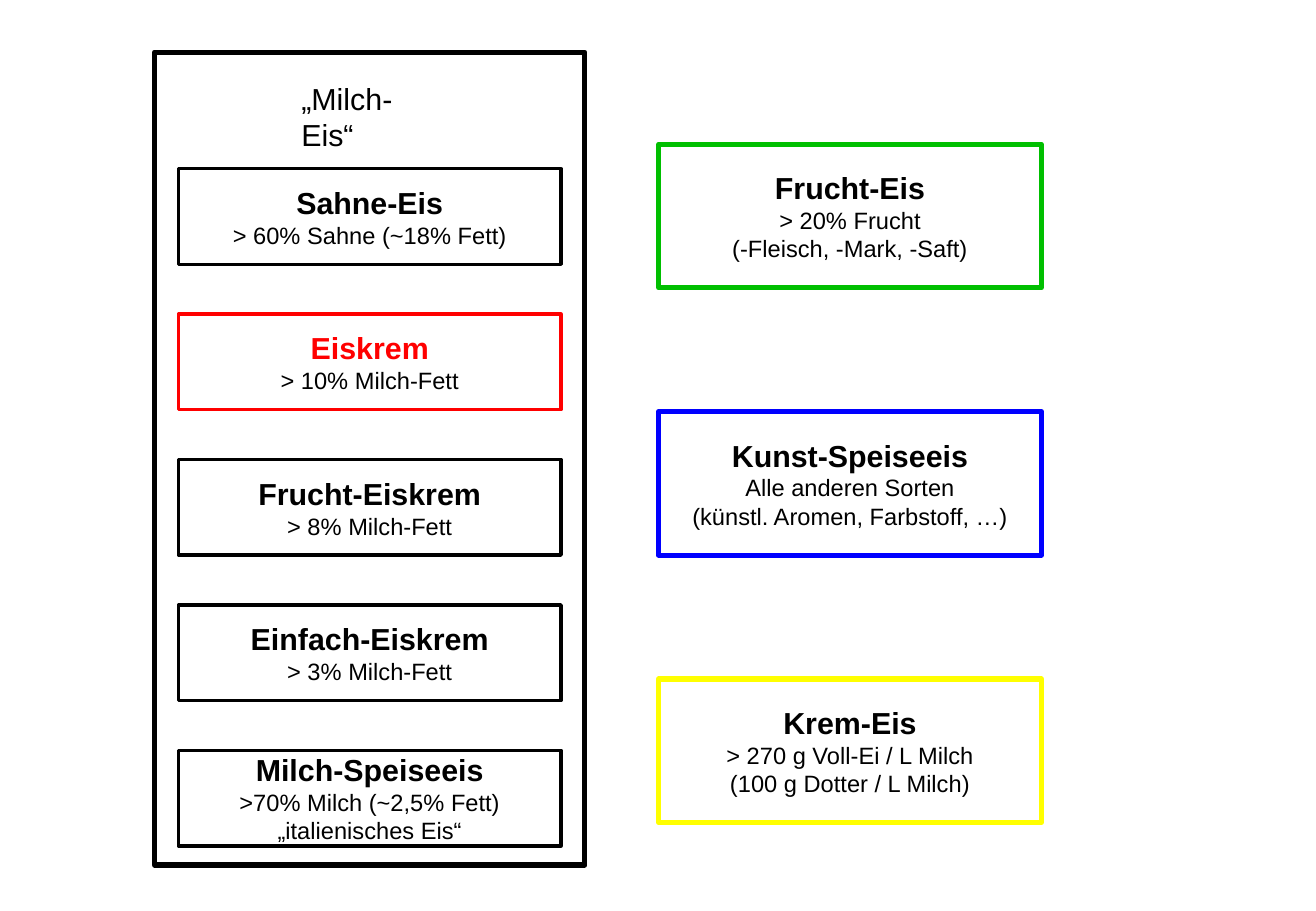
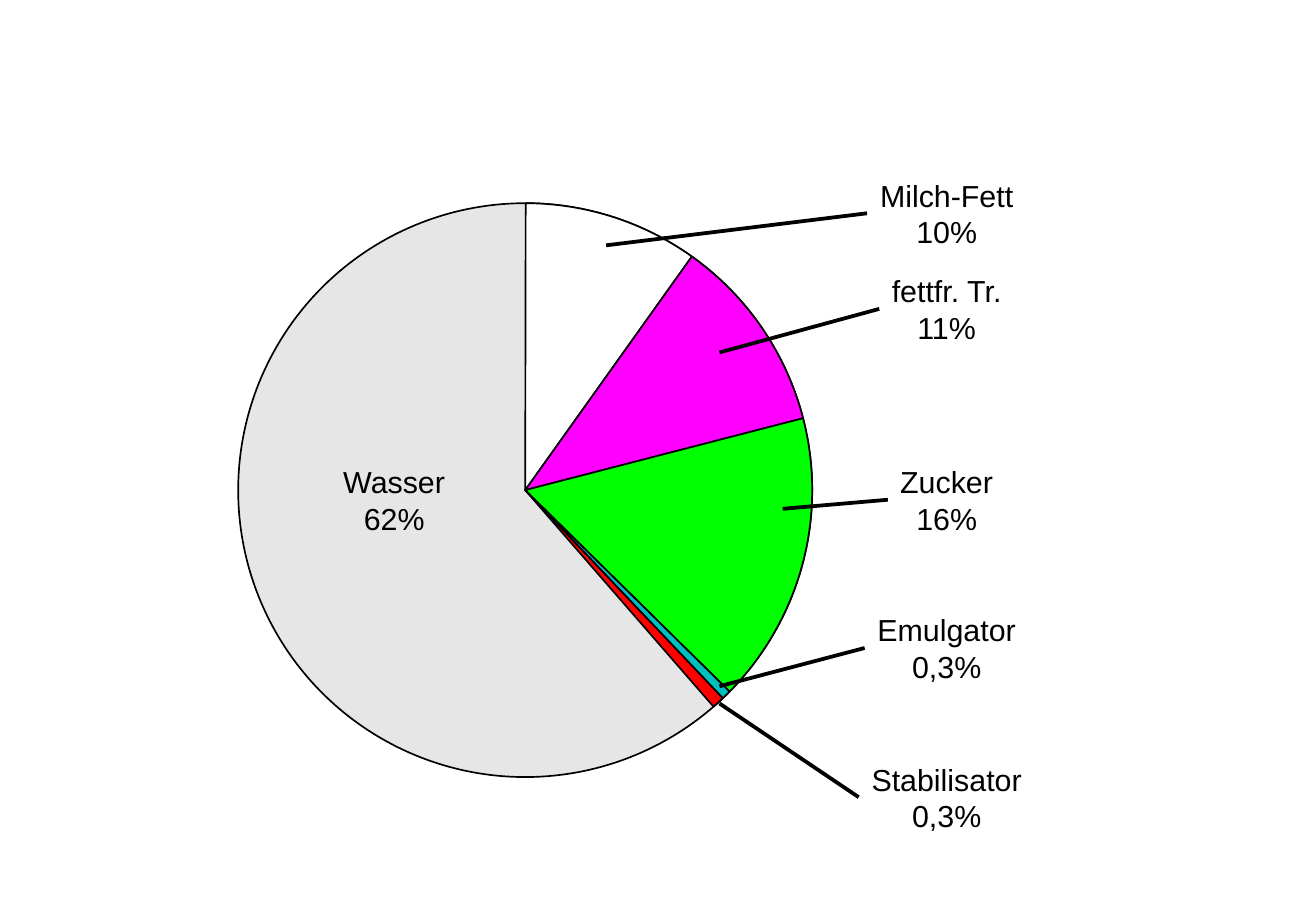
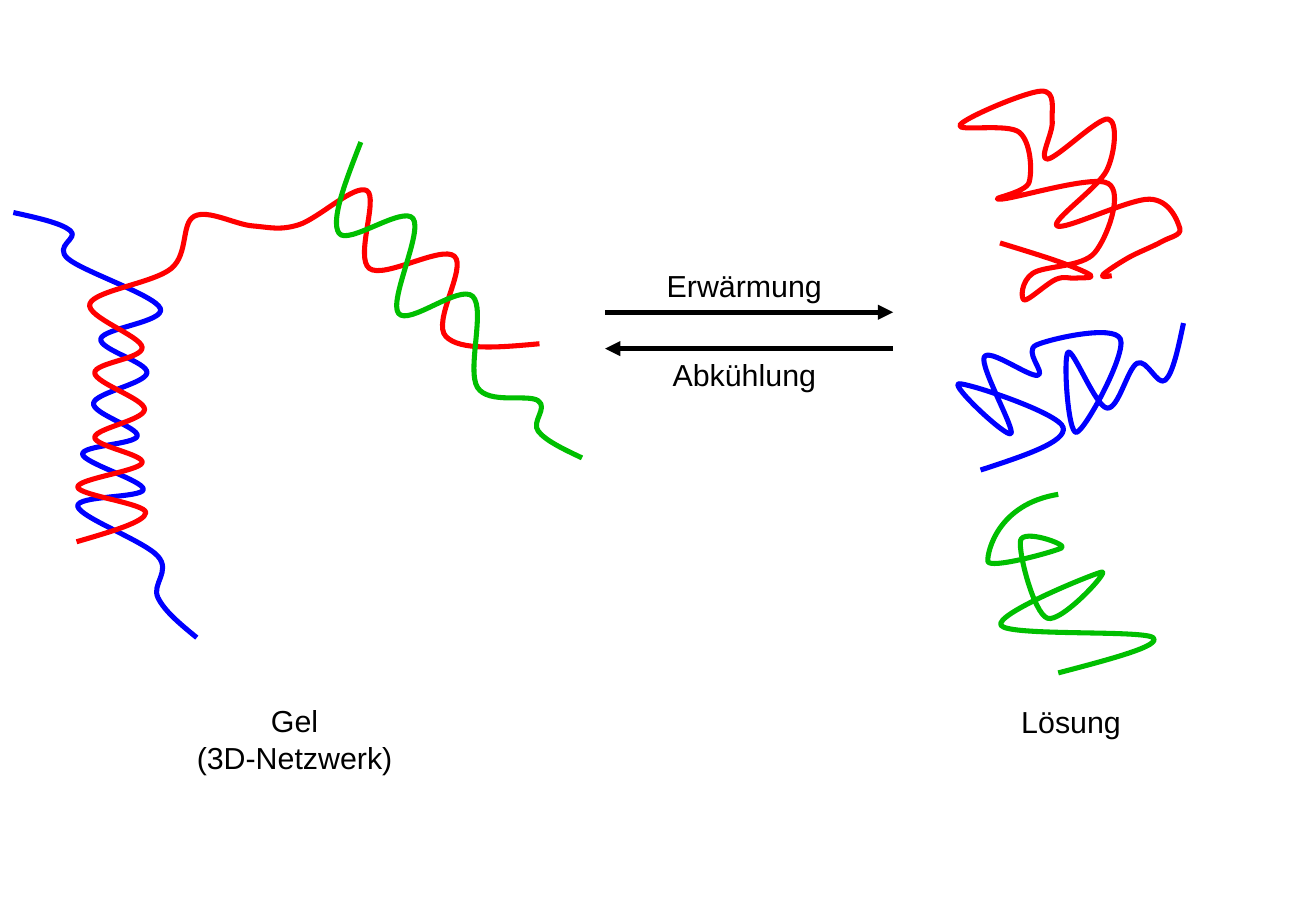
from lxml.etree import SubElement
from pptx import Presentation
from pptx.dml.color import RGBColor
from pptx.enum.shapes import MSO_CONNECTOR, MSO_SHAPE
from pptx.enum.text import MSO_ANCHOR, PP_ALIGN
from pptx.oxml.ns import qn
from pptx.util import Cm, Pt

BLACK = RGBColor(0x00, 0x00, 0x00)
WHITE = RGBColor(0xFF, 0xFF, 0xFF)
GREY = RGBColor(0xE7, 0xE6, 0xE6)
RED = RGBColor(0xFF, 0x00, 0x00)
GREEN = RGBColor(0x00, 0xBF, 0x00)
BLUE = RGBColor(0x00, 0x00, 0xFF)
YELLOW = RGBColor(0xFF, 0xFF, 0x00)
PINK = RGBColor(0xFF, 0x00, 0xFF)
LIME = RGBColor(0x00, 0xFF, 0x00)
TEAL = RGBColor(0x00, 0xBF, 0xBF)

HEAD = {"name": "Arial", "size": Pt(18), "bold": True}
BODY = {"name": "Arial", "size": Pt(14), "bold": False}
PLAIN = {"name": "Arial", "size": Pt(18), "bold": False}

GRID = Cm(0.0254)

MILK = [
    (["Sahne-Eis", "> 60% Sahne (~18% Fett)"], BLACK),
    (["Eiskrem", "> 10% Milch-Fett"], RED),
    (["Frucht-Eiskrem", "> 8% Milch-Fett"], BLACK),
    (["Einfach-Eiskrem", "> 3% Milch-Fett"], BLACK),
    (["Milch-Speiseeis", ">70% Milch (~2,5% Fett)", "„italienisches Eis“"], BLACK),
]
OTHER = [
    (["Frucht-Eis", "> 20% Frucht", "(-Fleisch, -Mark, -Saft)"], GREEN),
    (["Kunst-Speiseeis", "Alle anderen Sorten", "(künstl. Aromen, Farbstoff, …)"], BLUE),
    (["Krem-Eis", "> 270 g Voll-Ei / L Milch", "(100 g Dotter / L Milch)"], YELLOW),
]
ANGLES = [270.1, 305.5, 345.5, 44.6, 46.5, 49]
FILLS = [WHITE, PINK, LIME, TEAL, RED]
PARTS = [
    ("Milch-Fett", "10%", 3.56, 3.33, (12.67, 5.13)),
    ("fettfr. Tr.", "11%", 5.56, 2.82, (15.04, 7.37)),
    ("Zucker", "16%", 9.55, 2.46, (16.36, 10.64)),
    ("Emulgator", "0,3%", 12.65, 3.43, (15.04, 14.35)),
    ("Stabilisator", "0,3%", 15.77, 3.68, (15.04, 14.71)),
]
STRANDS = [
    (BLUE, [(11, 175), (58, 190), (56, 213), (132, 254), (83, 279), (121, 307),
            (77, 332), (113, 359), (68, 374), (118, 403), (64, 417), (130, 458),
            (130, 492), (162, 525)], None),
    (RED, [(63, 446), (120, 422), (64, 401), (117, 381), (78, 360), (119, 337),
           (78, 307), (117, 286), (74, 250), (141, 221), (160, 178), (208, 186),
           (246, 185), (302, 157), (304, 221), (374, 211), (367, 277),
           (444, 283)], None),
    (GREEN, [(297, 117), (279, 192), (340, 180), (328, 258), (389, 244),
             (393, 319), (443, 330), (443, 355), (479, 377)], None),
    (RED, [(823, 200), (873, 216), (898, 227), (885, 229), (869, 230), (843, 247),
           (850, 225), (901, 208), (912, 151), (823, 164), (847, 150), (839, 109),
           (790, 103), (857, 75), (866, 100), (862, 131), (912, 98), (911, 140),
           (870, 186), (946, 164), (971, 188), (956, 199), (929, 212), (908, 226),
           (915, 227)], None),
    (BLUE, [(974, 266), (959, 313), (936, 299), (911, 336), (879, 290), (886, 356),
            (922, 279), (853, 284), (854, 309), (810, 294), (832, 357), (789, 316),
            (875, 352), (807, 387)], None),
    (GREEN, [(871, 407), (813, 462), (874, 451), (840, 445), (862, 509), (907, 471),
             (824, 515), (949, 525), (871, 554)], (821, 415)),
]


def write(frame, rows):
    """Fill a text frame with one centred paragraph per (text, style, colour) row."""
    for i, (text, style, color) in enumerate(rows):
        para = frame.paragraphs[0] if i == 0 else frame.add_paragraph()
        para.alignment = PP_ALIGN.CENTER
        run = para.add_run()
        run.text = text
        for key, value in style.items():
            setattr(run.font, key, value)
        run.font.color.rgb = color


def paint(shape, fill, line, width):
    """Set fill and outline of a shape and drop its shadow."""
    shape.shadow.inherit = False
    if fill is None:
        shape.fill.background()
    else:
        shape.fill.solid()
        shape.fill.fore_color.rgb = fill
    shape.line.color.rgb = line
    shape.line.width = Pt(width)


def form(slide, kind, place, fill, line, width):
    """Add a painted preset shape at a place given in centimetres."""
    shape = slide.shapes.add_shape(kind, *map(Cm, place))
    paint(shape, fill, line, width)
    return shape


def card(slide, place, lines, line, width, tint=BLACK):
    """Add a framed box with a bold heading and smaller lines."""
    box = form(slide, MSO_SHAPE.RECTANGLE, place, WHITE, line, width)
    box.text_frame.vertical_anchor = MSO_ANCHOR.MIDDLE
    write(box.text_frame, [(lines[0], HEAD, tint)] + [(text, BODY, BLACK) for text in lines[1:]])


def label(slide, lines, mid, top, wide):
    """Add a text box centred on mid, as high as its lines need."""
    high = 0.24 + 0.78 * len(lines)
    box = slide.shapes.add_textbox(Cm(mid - wide / 2), Cm(top), Cm(wide), Cm(high))
    box.text_frame.word_wrap = False
    box.text_frame.vertical_anchor = MSO_ANCHOR.MIDDLE
    write(box.text_frame, [(text, PLAIN, BLACK) for text in lines])
    return box


def link(slide, start, end, width, tip=False):
    """Add a black straight line, with an arrowhead at its end if tip is set."""
    line = slide.shapes.add_connector(MSO_CONNECTOR.STRAIGHT, *map(Cm, start + end))
    line.line.color.rgb = BLACK
    line.line.width = Pt(width)
    props = line.element.spPr
    if tip:
        SubElement(props.find(qn("a:ln")), qn("a:tailEnd"), type="triangle")
    SubElement(props, qn("a:effectLst"))
    return line


def mean(one, two):
    """Return the point halfway between two points."""
    return tuple((a + b) / 2 for a, b in zip(one, two))


def bend(points, lead):
    """Return both control points and the end of each part of a smooth curve."""
    outs, ins = [], []
    for last, here, after in zip(points, points[1:], points[2:]):
        slope = [(b - a) / 6 for a, b in zip(last, after)]
        outs.append(tuple(p + s for p, s in zip(here, slope)))
        ins.append(tuple(p - s for p, s in zip(here, slope)))
    outs.insert(0, lead or mean(points[0], ins[0]))
    ins.append(mean(outs[-1], points[-1]))
    return zip(outs, ins, points[1:])


def strand(slide, color, points, lead):
    """Add an open smooth curve whose points count in grid units."""
    spots = [(x * GRID, y * GRID) for x, y in points]
    pen = slide.shapes.build_freeform(*spots[0], scale=1.0)
    pen.add_line_segments(spots[1:], close=False)
    shape = pen.convert_to_shape()
    parts = list(shape.element.iter(qn("a:lnTo")))
    for part, hull in zip(parts, bend(points, lead)):
        curve = SubElement(part.getparent(), qn("a:cubicBezTo"))
        for x, y in hull:
            SubElement(curve, qn("a:pt"), x=str(round(x * GRID - shape.left)),
                       y=str(round(y * GRID - shape.top)))
        part.getparent().replace(part, curve)
    paint(shape, None, color, 3)


def kinds(slide):
    """Show the kinds of ice cream as framed boxes."""
    name = label(slide, ["„Milch-Eis“"], 7.75, 1.55, 3.4)
    name.text_frame.word_wrap = True
    name.text_frame.vertical_anchor = MSO_ANCHOR.TOP
    name.text_frame.paragraphs[0].alignment = PP_ALIGN.LEFT
    form(slide, MSO_SHAPE.RECTANGLE, (3.23, 1.09, 9, 17), None, BLACK, 3)
    for i, (lines, line) in enumerate(OTHER):
        card(slide, (13.77, 3.02 + 5.59 * i, 8, 3), lines, line, 3)
    for i, (lines, line) in enumerate(MILK):
        card(slide, (3.73, 3.53 + 3.04 * i, 8, 2), lines, line, 2, line)


def shares(slide):
    """Show what ice cream is made of as a labelled pie."""
    place = (4.98, 4.25, 12, 12)
    form(slide, MSO_SHAPE.OVAL, place, GREY, BLACK, 1)
    for start, end, fill in zip(ANGLES, ANGLES[1:], FILLS):
        wedge = form(slide, MSO_SHAPE.PIE, place, fill, BLACK, 1)
        wedge.adjustments[0] = start * 0.6
        wedge.adjustments[1] = end * 0.6
    label(slide, ["Wasser", "62%"], 8.24, 9.55, 2.67)
    for name, share, top, wide, goal in PARTS:
        box = label(slide, [name, share], 19.79, top, wide)
        line = link(slide, (19.79 - wide / 2, top + 0.9), goal, 2.25)
        line.begin_connect(box, 1)


def change(slide):
    """Show how a gel and a solution turn into each other."""
    for color, points, lead in STRANDS:
        strand(slide, color, points, lead)
    link(slide, (12.65, 6.53), (18.67, 6.53), 3, True)
    link(slide, (18.67, 7.29), (12.65, 7.29), 3, True)
    label(slide, ["Erwärmung"], 15.56, 5.46, 3.78)
    label(slide, ["Abkühlung"], 15.56, 7.32, 3.53)
    label(slide, ["Gel", "(3D-Netzwerk)"], 6.16, 14.55, 4.65)
    label(slide, ["Lösung"], 22.39, 14.58, 2.62)


def main():
    """Build the slides and save them."""
    deck = Presentation()
    deck.slide_width, deck.slide_height = Cm(27.51), Cm(19.05)
    for draw in (kinds, shares, change):
        draw(deck.slides.add_slide(deck.slide_layouts[6]))
    deck.save("out.pptx")


if __name__ == "__main__":
    main()
